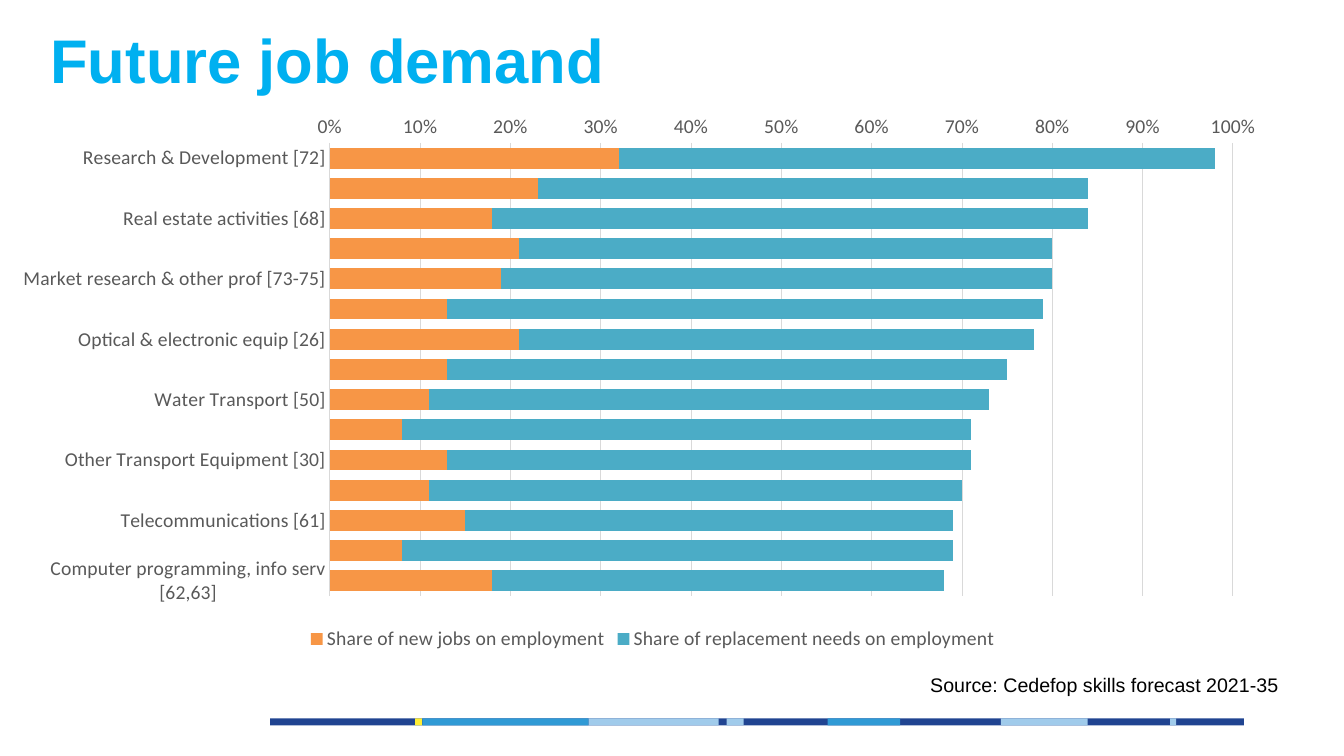
import pptx
import pptx.chart.data
import pptx.dml.color
import pptx.enum.chart
import pptx.enum.shapes
import pptx.enum.text
import pptx.oxml
import pptx.oxml.ns
import pptx.util

Pt = pptx.util.Pt
GREY, RULE = "595959", "D9D9D9"


def colour(hex_value):
    return pptx.dml.color.RGBColor.from_string(hex_value)


def assign(target, **values):
    for name, value in values.items():
        setattr(target, name, value)


class JobSlide:
    """Holds the style and the current slide."""

    def __init__(self, deck):
        self.slide = deck.slides.add_slide(deck.slide_layouts[5])
        self.shapes = self.slide.shapes

    def style_font(self, font, size, hex_value, face, bold=False):
        assign(font, size=Pt(size), name=face, bold=bold)
        font.color.rgb = colour(hex_value)

    def style_line(self, line, hex_value):
        line.color.rgb = colour(hex_value)
        line.width = Pt(0.75)

    def fill_text(self, holder, text, size, hex_value, bold=False, wrap=True):
        frame = holder.text_frame
        assign(frame, text=text, word_wrap=wrap,
               auto_size=pptx.enum.text.MSO_AUTO_SIZE.NONE,
               vertical_anchor=pptx.enum.text.MSO_ANCHOR.TOP)
        paragraph = frame.paragraphs[0]
        paragraph.alignment = pptx.enum.text.PP_ALIGN.LEFT
        self.style_font(paragraph.runs[0].font, size, hex_value, "Arial", bold)

    def title(self, text, left, top, width, height):
        heading = self.shapes.title
        assign(heading, left=Pt(left), top=Pt(top), width=Pt(width), height=Pt(height))
        self.fill_text(heading, text, 44, "00B0F0", bold=True)

    def text(self, text, left, top, width, height):
        note = self.shapes.add_textbox(Pt(left), Pt(top), Pt(width), Pt(height))
        self.fill_text(note, text, 14, "000000", wrap=False)

    def band(self, left, top, width, height, hex_value):
        segment = self.shapes.add_shape(pptx.enum.shapes.MSO_SHAPE.RECTANGLE,
                                        Pt(left), Pt(top), Pt(width), Pt(height))
        segment.shadow.inherit = False
        segment.fill.solid()
        segment.fill.fore_color.rgb = colour(hex_value)
        segment.line.fill.background()

    def stacked_bars(self, frame, plot, series, rows):
        data = pptx.chart.data.CategoryChartData(number_format="0%")
        data.categories = [row[0] for row in rows]
        for column, (name, _) in enumerate(series, start=1):
            data.add_series(name, [row[column] for row in rows])
        chart = self.shapes.add_chart(pptx.enum.chart.XL_CHART_TYPE.BAR_STACKED,
                                      *map(Pt, frame), data).chart
        self.style_font(chart.font, 14, "000000", "Calibri")
        assign(chart, has_title=False, has_legend=True)
        assign(chart.legend, include_in_layout=False,
               position=pptx.enum.chart.XL_LEGEND_POSITION.BOTTOM)
        self.style_font(chart.legend.font, 14, GREY, "Calibri")

        # Bars
        bars = chart.plots[0]
        assign(bars, gap_width=45, overlap=100, vary_by_categories=False)
        for drawn, (_, hex_value) in zip(bars.series, series):
            drawn.invert_if_negative = False
            drawn.format.fill.solid()
            drawn.format.fill.fore_color.rgb = colour(hex_value)

        # Axes
        no_tick = pptx.enum.chart.XL_TICK_MARK.NONE
        sectors, shares = chart.category_axis, chart.value_axis
        for axis in (sectors, shares):
            assign(axis, major_tick_mark=no_tick, minor_tick_mark=no_tick)
            self.style_font(axis.tick_labels.font, 14, GREY, "Calibri")
        assign(sectors, reverse_order=True, has_major_gridlines=False)
        self.style_line(sectors.format.line, RULE)
        assign(shares, minimum_scale=0, maximum_scale=1, major_unit=0.1,
               has_major_gridlines=True)
        assign(shares.tick_labels, number_format="0%", number_format_is_linked=False)
        shares.format.line.fill.background()
        self.style_line(shares.major_gridlines.format.line, RULE)
        self.place_plot(chart, frame, plot)

    def place_plot(self, chart, frame, plot):
        """Fix the inner plot area, given in slide points."""
        left, top, width, height = frame
        parts = {"x": (plot[0] - left) / width, "y": (plot[1] - top) / height,
                 "w": plot[2] / width, "h": plot[3] / height}
        modes = "".join(f'<c:{key}Mode val="edge"/>' for key in "xy")
        sizes = "".join(f'<c:{key} val="{part:.4f}"/>' for key, part in parts.items())
        layout = pptx.oxml.parse_xml(
            f'<c:layout {pptx.oxml.ns.nsdecls("c")}><c:manualLayout>'
            f'<c:layoutTarget val="inner"/>{modes}{sizes}</c:manualLayout></c:layout>')
        area = chart.plots[0]._element.getparent()
        for old in area.findall(pptx.oxml.ns.qn("c:layout")):
            area.remove(old)
        area.insert(0, layout)


SERIES = [("Share of new jobs on employment", "F79646"),
          ("Share of replacement needs on employment", "4BACC6")]
# Sector, new jobs, replacement needs
SECTORS = [
    ("Research & Development [72]", 0.32, 0.66),
    ("Architectural & engineering [71]", 0.23, 0.61),
    ("Real estate activities [68]", 0.18, 0.66),
    ("Electricity [35.1]", 0.21, 0.59),
    ("Market research & other prof [73-75]", 0.19, 0.61),
    ("Health and social care[86-88]", 0.13, 0.66),
    ("Optical & electronic equip [26]", 0.21, 0.57),
    ("Accommodation & Catering [55,56]", 0.13, 0.62),
    ("Water Transport [50]", 0.11, 0.62),
    ("Education [85]", 0.08, 0.63),
    ("Other Transport Equipment [30]", 0.13, 0.58),
    ("Air Transport [51]", 0.11, 0.59),
    ("Telecommunications [61]", 0.15, 0.54),
    ("Arts and entertainment [90-93]", 0.08, 0.61),
    ("Computer programming, info serv [62,63]", 0.18, 0.5),
]
# Left, width and colour of each piece of the bottom strip
NAVY, YELLOW, BLUE, PALE = "204491", "FFEE35", "309AD5", "A0CBEB"
STRIP = [(193, 695.5, NAVY), (296.6, 5, YELLOW), (301.7, 118.8, BLUE),
         (420.5, 92.9, PALE), (519.1, 12.2, PALE), (591.1, 51.8, BLUE),
         (715, 61.9, PALE), (835.9, 4.3, PALE)]


def main():
    deck = pptx.Presentation()
    assign(deck, slide_width=Pt(960), slide_height=Pt(540))
    demand = JobSlide(deck)

    # Bottom strip
    for left, width, hex_value in STRIP:
        demand.band(left, 513.2, width, 5, hex_value)

    # Title, chart and source
    demand.title("Future job demand", 28.8, 12.2, 639.4, 113.8)
    demand.stacked_bars((16.6, 74.2, 898.6, 393.8), (235, 102.2, 645.7, 323.5),
                        SERIES, SECTORS)
    demand.text("Source: Cedefop skills forecast 2021-35", 657.4, 477.4, 275.8, 24.5)

    deck.save("out.pptx")


if __name__ == "__main__":
    main()
